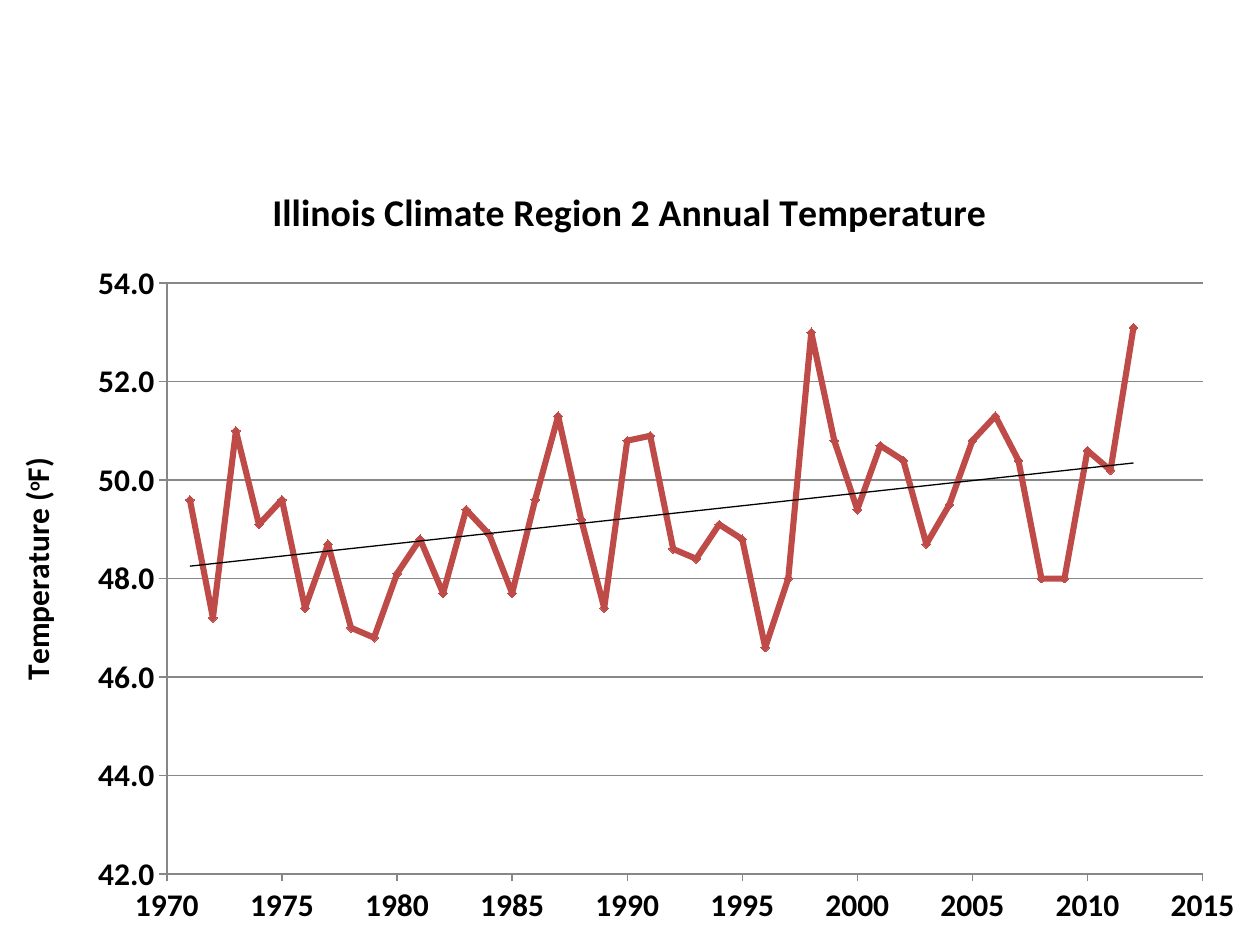
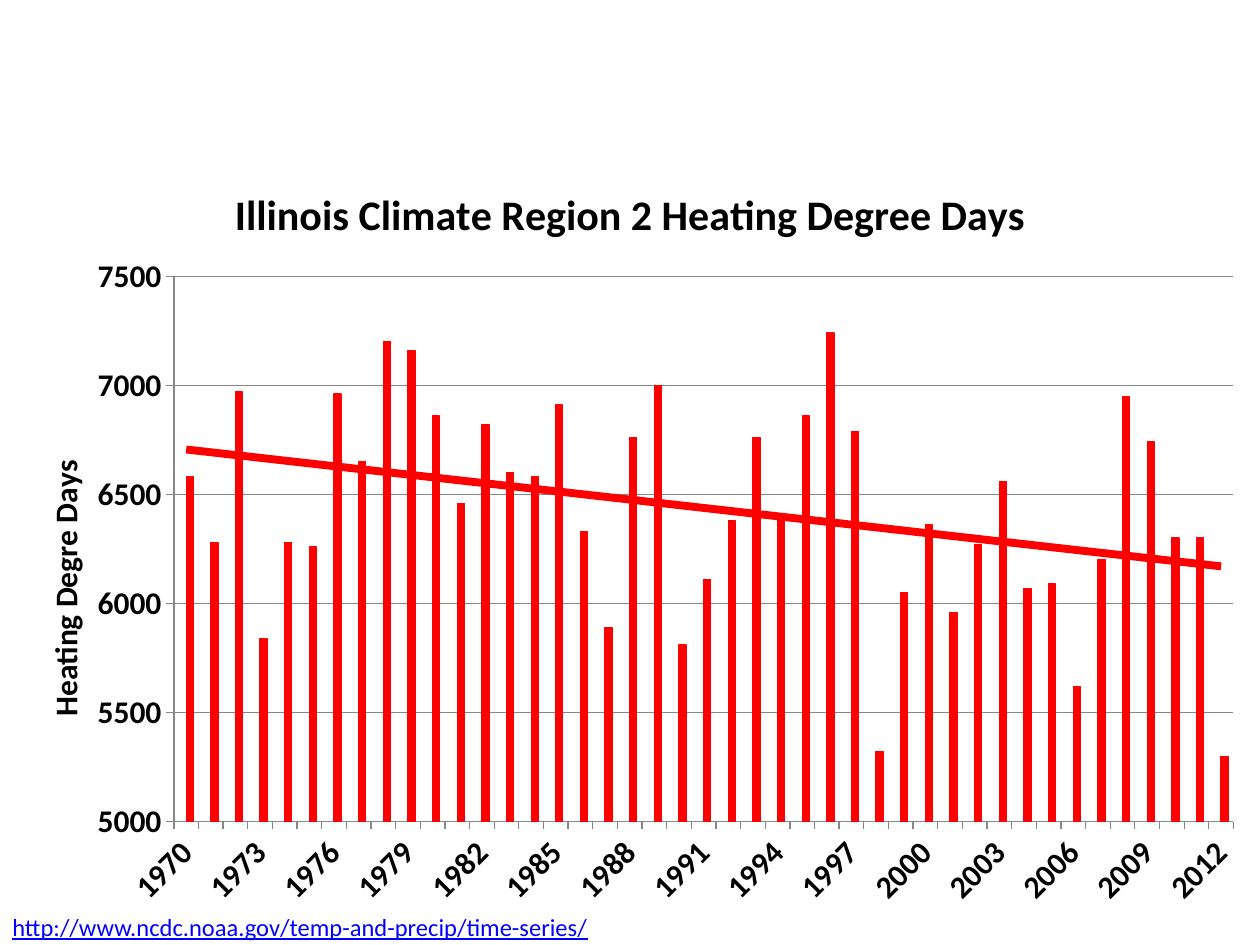
from lxml.etree import fromstring
from pptx import Presentation
from pptx.chart.data import CategoryChartData, XyChartData
from pptx.dml.color import RGBColor
from pptx.enum.chart import XL_CHART_TYPE, XL_MARKER_STYLE, XL_TICK_MARK
from pptx.oxml.ns import qn
from pptx.util import Cm, Pt

HUES = {"text": "000000", "grid": "878787", "temp": "BE4B48",
        "heat": "FF0000", "blue": "4F81BD", "link": "0000FF"}
HUES = {key: RGBColor.from_string(val) for key, val in HUES.items()}
FONT = "Calibri"
NS = 'xmlns:c="http://schemas.openxmlformats.org/drawingml/2006/chart"'
NS += ' xmlns:a="http://schemas.openxmlformats.org/drawingml/2006/main"'

temps = [49.6, 47.2, 51.0, 49.1, 49.6, 47.4, 48.7, 47.0, 46.8, 48.1, 48.8,
         47.7, 49.4, 48.9, 47.7, 49.6, 51.3, 49.2, 47.4, 50.8, 50.9, 48.6,
         48.4, 49.1, 48.8, 46.6, 48.0, 53.0, 50.8, 49.4, 50.7, 50.4, 48.7,
         49.5, 50.8, 51.3, 50.4, 48.0, 48.0, 50.6, 50.2, 53.1]
heats = [6580, 6280, 6970, 5840, 6280, 6260, 6960, 6650, 7200, 7160, 6860,
         6460, 6820, 6600, 6580, 6910, 6330, 5890, 6760, 7000, 5810, 6110,
         6380, 6760, 6410, 6860, 7240, 6790, 5320, 6050, 6360, 5960, 6270,
         6560, 6070, 6090, 5620, 6200, 6950, 6740, 6300, 6300, 5300]
zeros = {2, 16, 19, 27, 30, 35, 41}


def place(part, x, y, size=""):
    """Fix the place of a plot area or a title, in shares of the chart."""
    old = part.find(qn("c:layout"))
    if old is not None:
        part.remove(old)
    inner = '<c:layoutTarget val="inner"/>' if size else ""
    spot = fromstring(
        f'<c:layout {NS}><c:manualLayout>{inner}<c:xMode val="edge"/>'
        f'<c:yMode val="edge"/><c:x val="{x}"/><c:y val="{y}"/>{size}'
        '</c:manualLayout></c:layout>')
    part.insert(0 if size else 1, spot)


def trend(series, hue, width):
    """Add a straight trend line to a series."""
    line = fromstring(
        f'<c:trendline {NS}><c:spPr><a:ln w="{Pt(width)}"><a:solidFill>'
        f'<a:srgbClr val="{hue}"/></a:solidFill></a:ln></c:spPr>'
        '<c:trendlineType val="linear"/><c:dispRSqr val="0"/>'
        '<c:dispEq val="0"/></c:trendline>')
    node = series._element
    data = node.find(qn("c:xVal"))
    if data is None:
        data = node.find(qn("c:cat"))
    data.addprevious(line)


deck = Presentation()
deck.slide_width, deck.slide_height = Cm(25.4), Cm(19.05)

# Data of both charts
warm = XyChartData()
dots = warm.add_series("Series 1", number_format="0.0")
for year, temp in enumerate(temps, 1971):
    dots.add_data_point(year, temp)

days = CategoryChartData(number_format="0")
days.categories = [str(1970 + n) for n in range(len(heats))]
days.add_series("Series 1", [0 if n in zeros else 10 for n in range(42)] + [None])
days.add_series("Series 2", heats)

# Kind, data, height, title, title size, axis title, its place, plot place,
# plot size, value range and step, value format
plans = [
    (XL_CHART_TYPE.XY_SCATTER_LINES, warm, 15.8,
     "Illinois Climate Region 2 Annual Temperature", 21.6,
     ["Temperature (", "o", "F)"], (0.01, 0.38), (0.1325, 0.162),
     (0.822, 0.754), (42, 54, 2), "0.0"),
    (XL_CHART_TYPE.COLUMN_CLUSTERED, days, 15.42,
     "Illinois Climate Region 2 Heating Degree Days", 24,
     ["Heating Degre Days"], (0.03, 0.39), (0.138, 0.157),
     (0.841, 0.713), (5000, 7500, 500), "0"),
]

# Charts, one to a slide
charts = []
for kind, data, high, head, size, label, side, spot, area, span, form in plans:
    slide = deck.slides.add_slide(deck.slide_layouts[6])
    chart = slide.shapes.add_chart(
        kind, Cm(0), Cm(3.15), Cm(25.4), Cm(high), data).chart
    charts.append(chart)
    chart.has_legend = False
    chart.font.name = FONT
    chart.font.size = Pt(18)
    chart.font.color.rgb = HUES["text"]
    chart.plots[0].vary_by_categories = False

    # Titles
    chart.has_title = True
    chart.chart_title.text_frame.text = head
    xs, ys = chart.category_axis, chart.value_axis
    ys.has_title = True
    para = ys.axis_title.text_frame.paragraphs[0]
    for text in label:
        run = para.add_run()
        run.text = text
        if text == "o":
            run._r.get_or_add_rPr().set("baseline", "30000")
    heading = chart.chart_title.text_frame.paragraphs[0]
    for line, points in ((heading, size), (para, 18)):
        for run in line.runs:
            run.font.size = Pt(points)
            run.font.bold = True
            run.font.name = FONT
            run.font.color.rgb = HUES["text"]
    place(ys.axis_title._element, *side)
    place(chart._chartSpace.chart.plotArea, *spot,
          f'<c:w val="{area[0]}"/><c:h val="{area[1]}"/>')

    # Axes
    for axis in (xs, ys):
        axis.major_tick_mark = XL_TICK_MARK.OUTSIDE
        axis.minor_tick_mark = XL_TICK_MARK.NONE
        axis.has_major_gridlines = axis is ys
        axis.format.line.color.rgb = HUES["grid"]
        axis.format.line.width = Pt(0.75)
        axis.tick_labels.font.size = Pt(18)
        axis.tick_labels.font.bold = True
    grid = ys.major_gridlines.format.line
    grid.color.rgb = HUES["grid"]
    grid.width = Pt(0.75)
    ys.minimum_scale, ys.maximum_scale, ys.major_unit = span
    ys.tick_labels.number_format = form
    ys.tick_labels.number_format_is_linked = False

# Temperature line
chart = charts[0]
years = chart.category_axis
years.minimum_scale, years.maximum_scale, years.major_unit = 1970, 2015, 5
years.tick_labels.number_format = "0"
years.tick_labels.number_format_is_linked = False
line = chart.plots[0].series[0]
line.smooth = False
line.format.line.color.rgb = HUES["temp"]
line.format.line.width = Pt(3.5)
line.marker.style = XL_MARKER_STYLE.DIAMOND
line.marker.size = 5
line.marker.format.fill.solid()
line.marker.format.fill.fore_color.rgb = HUES["temp"]
line.marker.format.line.color.rgb = HUES["temp"]
trend(line, HUES["text"], 0.75)

# Heating bars
chart = charts[1]
bars = chart.plots[0]
bars.gap_width = 150
bars.overlap = 0
for series, hue in zip(bars.series, ("blue", "heat")):
    series.invert_if_negative = False
    series.format.fill.solid()
    series.format.fill.fore_color.rgb = HUES[hue]
series.format.line.color.rgb = HUES["heat"]
series.format.line.width = Pt(0.75)
trend(series, HUES["heat"], 4.5)

# Every third year, slanted
node = chart.category_axis._element
node.find(qn("c:txPr")).find(qn("a:bodyPr")).set("rot", "-2700000")
skip = fromstring(f'<c:tickLblSkip {NS} val="3"/>')
node.find(qn("c:noMultiLvlLbl")).addprevious(skip)

# Web address of the data
box = slide.shapes.add_textbox(Cm(0), Cm(18.26), Cm(15.75), Cm(0.86))
box.text_frame.word_wrap = True
para = box.text_frame.paragraphs[0]
para.text = "http://www.ncdc.noaa.gov/temp-and-precip/time-series/"
font = para.runs[0].font
font.name = FONT
font.size = Pt(14)
font.underline = True
font.color.rgb = HUES["link"]

deck.save("out.pptx")
